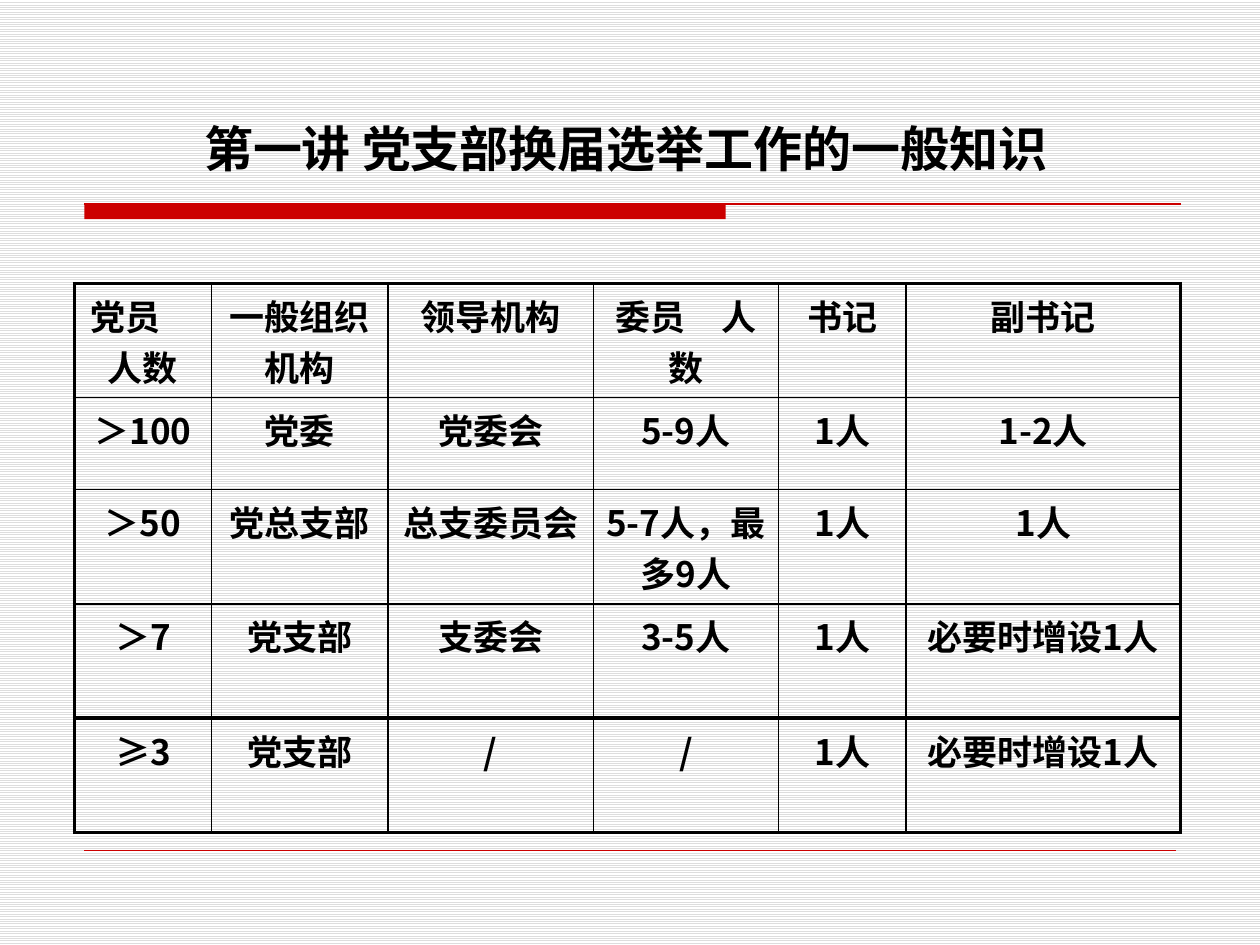
import pptx
import pptx.dml.color
import pptx.enum.dml
import pptx.enum.shapes
import pptx.enum.text
import pptx.oxml
import pptx.oxml.ns
import pptx.util

FONT = "Noto Sans CJK SC"
BLACK, RED, STRIPE, WHITE = "000000", "CC0000", "DDDDDD", "FFFFFF"
HEADING = "第一讲 党支部换届选举工作的一般知识"
COMMITTEE_SIZES = [
    ["党员　人数", "一般组织机构", "领导机构", "委员　人数", "书记", "副书记"],
    ["＞100", "党委", "党委会", "5-9人", "1人", "1-2人"],
    ["＞50", "党总支部", "总支委员会", "5-7人，最多9人", "1人", "1人"],
    ["＞7", "党支部", "支委会", "3-5人", "1人", "必要时增设1人"],
    ["≥3", "党支部", "/", "/", "1人", "必要时增设1人"],
]
COLUMN_WIDTHS = [10.9, 14, 16.3, 14.7, 10.1, 21.8]
ROW_HEIGHTS = [8.7, 7.3, 8.4, 7.9, 8.8]
THICK_RULES = {0, 4, 5}


def rgb(code):
    return pptx.dml.color.RGBColor.from_string(code)


def write(frame, text, size=20, color=BLACK, bold=True):
    paragraph = frame.paragraphs[0]
    paragraph.alignment = pptx.enum.text.PP_ALIGN.CENTER
    run = paragraph.add_run()
    run.text = text
    run.font.size = pptx.util.Pt(size)
    run.font.bold = bold
    run.font.name = FONT
    run.font.color.rgb = rgb(color)
    east_asian = pptx.oxml.parse_xml(f'<a:ea {pptx.oxml.ns.nsdecls("a")} typeface="{FONT}"/>')
    run.font._element.append(east_asian)


class Board:
    """Draws styled elements on one slide, measured on a grid of 100 columns by 75 rows."""

    def __init__(self, deck):
        self.column = deck.slide_width / 100
        self.row = deck.slide_height / 75
        self.slide = deck.slides.add_slide(deck.slide_layouts[5])

    def box(self, left, top, width, height):
        return (round(left * self.column), round(top * self.row),
                round(width * self.column), round(height * self.row))

    def background(self, stripe, ground):
        fill = self.slide.background.fill
        fill.patterned()
        fill.pattern = pptx.enum.dml.MSO_PATTERN.LIGHT_HORIZONTAL
        fill.fore_color.rgb = rgb(stripe)
        fill.back_color.rgb = rgb(ground)

    def title(self, text, *place):
        title = self.slide.shapes.title
        title.left, title.top, title.width, title.height = self.box(*place)
        title.text_frame.vertical_anchor = pptx.enum.text.MSO_ANCHOR.BOTTOM
        write(title.text_frame, text, size=28)

    def bar(self, color, *place):
        bar = self.slide.shapes.add_shape(
            pptx.enum.shapes.MSO_SHAPE.RECTANGLE, *self.box(*place))
        bar.shadow.inherit = False
        bar.fill.solid()
        bar.fill.fore_color.rgb = rgb(color)
        bar.line.fill.background()

    def rule(self, color, weight, left, right, level):
        start, y, end, _ = self.box(left, level, right, 0)
        rule = self.slide.shapes.add_connector(
            pptx.enum.shapes.MSO_CONNECTOR.STRAIGHT, start, y, end, y)
        rule.line.color.rgb = rgb(color)
        rule.line.width = pptx.util.Pt(weight)
        rule._element.spPr.append(
            pptx.oxml.parse_xml(f'<a:effectLst {pptx.oxml.ns.nsdecls("a")}/>'))

    def border(self, cell, side, weight):
        cell._tc.get_or_add_tcPr().append(pptx.oxml.parse_xml(
            f'<a:ln{side} {pptx.oxml.ns.nsdecls("a")} w="{pptx.util.Pt(weight)}">'
            f'<a:solidFill><a:srgbClr val="{BLACK}"/></a:solidFill></a:ln{side}>'))

    def table(self, rows, left, top, widths, heights):
        place = self.box(left, top, sum(widths), sum(heights))
        table = self.slide.shapes.add_table(len(rows), len(widths), *place).table
        table.first_row = table.horz_banding = False
        for column, width in zip(table.columns, widths):
            column.width = round(width * self.column)
        for row, height in zip(table.rows, heights):
            row.height = round(height * self.row)
        for r, texts in enumerate(rows):
            for c, text in enumerate(texts):
                cell = table.cell(r, c)
                write(cell.text_frame, text)
                thick = {"L": c == 0, "R": c == len(widths) - 1,
                         "T": r in THICK_RULES, "B": r + 1 in THICK_RULES}
                for side, is_thick in thick.items():
                    self.border(cell, side, 2.25 if is_thick else 1)
                cell.fill.background()


def main():
    deck = pptx.Presentation()
    deck.slide_width = pptx.util.Inches(10)
    deck.slide_height = pptx.util.Inches(7.5)
    board = Board(deck)
    board.background(STRIPE, WHITE)
    board.bar(RED, 6.7, 16.2, 50.9, 1.2)
    board.rule(RED, 0.75, 6.7, 93.7, 16.2)
    board.rule(RED, 0.25, 6.7, 93.3, 67.5)
    board.title(HEADING, 5.9, 1.3, 87.5, 13.3)
    board.table(COMMITTEE_SIZES, 5.9, 22.5, COLUMN_WIDTHS, ROW_HEIGHTS)
    deck.save("out.pptx")


if __name__ == "__main__":
    main()
